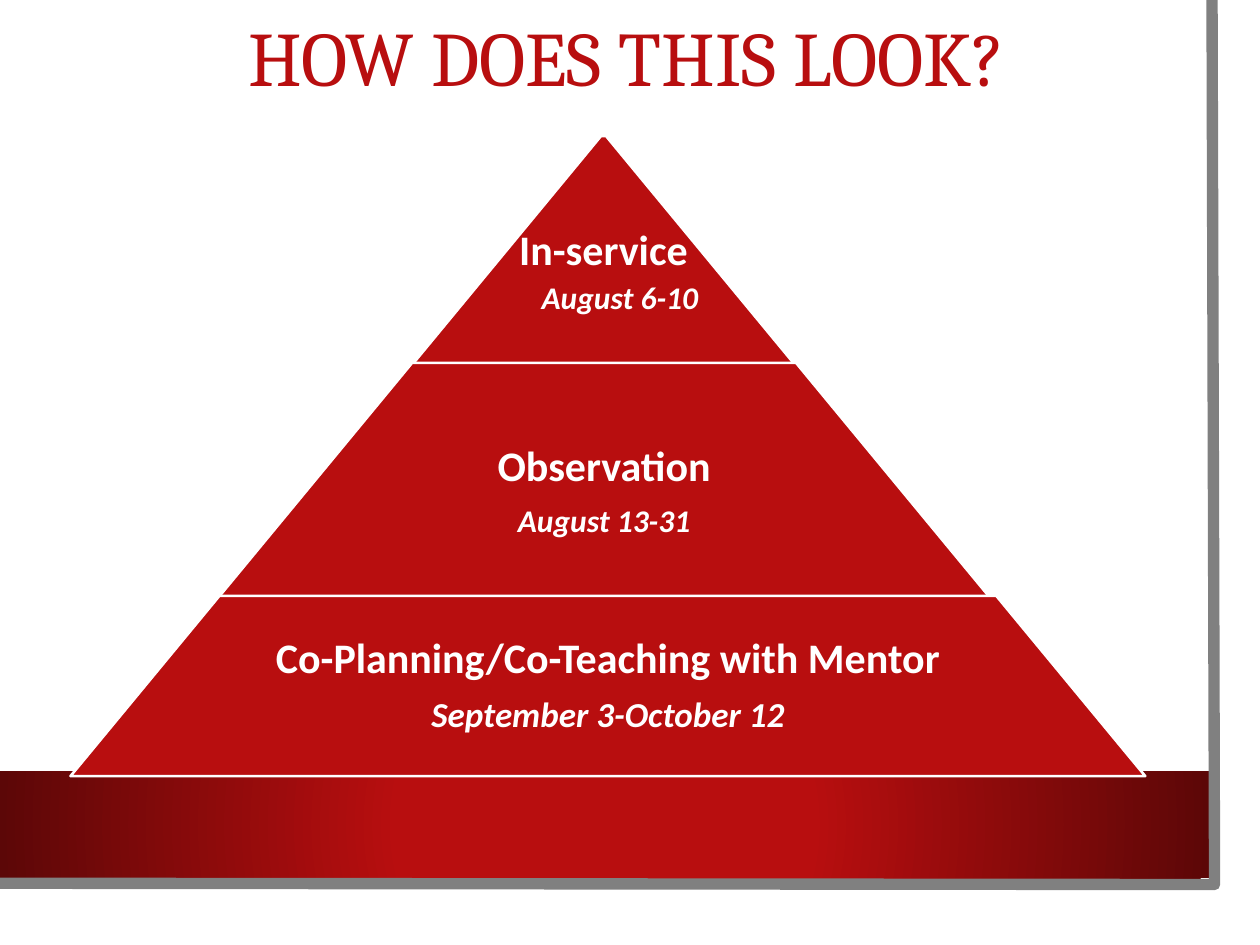
import pptx
import pptx.dml.color
import pptx.enum.shapes
import pptx.enum.text
import pptx.oxml
import pptx.oxml.ns
import pptx.util
from pptx.util import Inches

RED = "B80E0F"
DARK_RED = "5C0707"
WHITE = "FFFFFF"
GREY = "808080"


def colour(value):
    return pptx.dml.color.RGBColor.from_string(value)


class SlideBuilder:
    heading_font = "Cambria"
    body_font = "Calibri"

    def __init__(self, slide):
        self.slide = slide

    def band(self, left, top, width, height):
        shape = self.slide.shapes.add_shape(
            pptx.enum.shapes.MSO_SHAPE.RECTANGLE,
            Inches(left), Inches(top), Inches(width), Inches(height))
        shape.shadow.inherit = False
        shape.line.fill.background()
        shape.fill.gradient()
        stops = shape.fill.gradient_stops
        for stop, position, value in zip(stops, (0.34, 1), (RED, DARK_RED)):
            stop.position = position
            stop.color.rgb = colour(value)
        gradient = shape._element.spPr.find(pptx.oxml.ns.qn("a:gradFill"))
        gradient.remove(gradient.find(pptx.oxml.ns.qn("a:lin")))
        gradient.append(pptx.oxml.parse_xml(
            f'<a:path {pptx.oxml.ns.nsdecls("a")} path="circle">'
            '<a:fillToRect l="50000" t="50000" r="50000" b="50000"/></a:path>'))

    def outline(self, points, value, weight):
        (left, top), *others = points
        builder = self.slide.shapes.build_freeform(
            Inches(left), Inches(top))
        builder.add_line_segments(
            [(Inches(x), Inches(y)) for x, y in others], close=False)
        shape = builder.convert_to_shape()
        shape.shadow.inherit = False
        shape.fill.background()
        shape.line.color.rgb = colour(value)
        shape.line.width = pptx.util.Pt(weight)

    def tier(self, left, top, width, height):
        shape = self.slide.shapes.add_shape(
            pptx.enum.shapes.MSO_SHAPE.TRAPEZOID,
            Inches(left), Inches(top), Inches(width), Inches(height))
        shape.adjustments[0] = 0.826
        shape.shadow.inherit = False
        shape.fill.solid()
        shape.fill.fore_color.rgb = colour(RED)
        shape.line.color.rgb = colour(WHITE)
        shape.line.width = pptx.util.Pt(1.5)

    def text(self, left, top, width, height, lines, font=body_font,
             value=WHITE, bold=True, inset=0.03, spacing=0.9):
        shape = self.slide.shapes.add_textbox(
            Inches(left), Inches(top), Inches(width), Inches(height))
        frame = shape.text_frame
        frame.word_wrap = True
        frame.vertical_anchor = pptx.enum.text.MSO_ANCHOR.MIDDLE
        frame.margin_left = frame.margin_right = Inches(inset)
        frame.margin_top = frame.margin_bottom = Inches(min(inset, 0.05))
        for index, (words, size, italic) in enumerate(lines):
            paragraph = frame.add_paragraph() if index else frame.paragraphs[0]
            paragraph.alignment = pptx.enum.text.PP_ALIGN.CENTER
            paragraph.line_spacing = spacing
            if index < len(lines) - 1:
                paragraph.space_after = pptx.util.Pt(size * 0.35)
            run = paragraph.add_run()
            run.text = words
            run.font.name = font
            run.font.size = pptx.util.Pt(size)
            run.font.bold = bold
            run.font.italic = italic
            run.font.color.rgb = colour(value)


def main():
    presentation = pptx.Presentation()
    presentation.slide_width = Inches(10)
    presentation.slide_height = Inches(7.5)
    slide = presentation.slides.add_slide(presentation.slide_layouts[6])
    builder = SlideBuilder(slide)

    builder.band(0, 6.12, 9.6, 0.85)
    builder.outline([(9.62, 0), (9.64, 7.02), (-0.02, 7.01)], GREY, 6.5)
    builder.text(0.1, -0.01, 9.75, 1, [("HOW DOES THIS LOOK?", 44, False)],
                 font=builder.heading_font, value=RED, bold=False, inset=0.1)

    tiers = [
        (3.25, 1.08, 3.08, 1.84, 1, 0, [("In-service", 24, False)]),
        (1.71, 2.88, 6.17, 1.89, 0.65, 0.08,
         [("Observation", 24, False), ("August 13-31", 18, True)]),
        (0.56, 4.73, 8.53, 1.43, 0.65, 0,
         [("Co-Planning/Co-Teaching with Mentor", 24, False),
          ("September 3-October 12", 20, True)]),
    ]
    for left, top, width, height, share, drop, lines in tiers:
        builder.tier(left, top, width, height)
        builder.text(left + width * (1 - share) / 2, top + drop,
                     width * share, height, lines)
    builder.text(3.91, 2.16, 2.02, 0.4, [("August 6-10", 18, True)],
                 inset=0.1, spacing=1)

    presentation.save("out.pptx")


if __name__ == "__main__":
    main()
